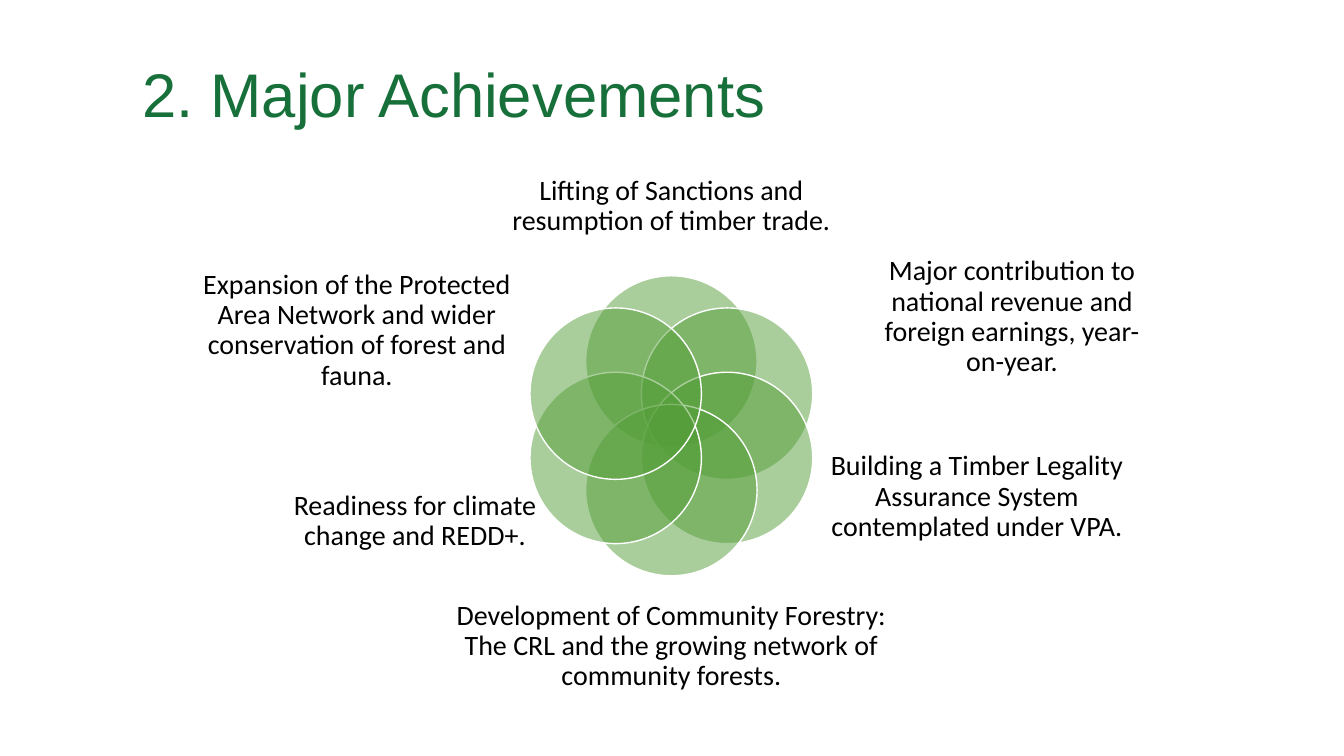
from dataclasses import dataclass
from math import cos, radians, sin

from lxml import etree
from pptx import Presentation
from pptx.dml.color import RGBColor
from pptx.enum.shapes import MSO_SHAPE
from pptx.enum.text import MSO_ANCHOR, MSO_AUTO_SIZE, PP_ALIGN
from pptx.oxml.ns import qn
from pptx.util import Cm, Pt

OVAL = MSO_SHAPE.OVAL
MIDDLE = MSO_ANCHOR.MIDDLE
NO_AUTOFIT = MSO_AUTO_SIZE.NONE
LEFT, CENTER = PP_ALIGN.LEFT, PP_ALIGN.CENTER
TITLE_ONLY = 5


@dataclass(frozen=True)
class Theme:
    title_color: RGBColor = RGBColor(0x17, 0x70, 0x3A)
    text_color: RGBColor = RGBColor(0, 0, 0)
    petal_color: RGBColor = RGBColor(0x54, 0x9E, 0x39)
    outline_color: RGBColor = RGBColor(0xFF, 0xFF, 0xFF)
    petal_opacity: int = 50
    title_font: str = "Arial"
    text_font: str = "Calibri"
    title_size: Pt = Pt(44)
    text_size: Pt = Pt(20)
    outline_width: Pt = Pt(1)
    line_spacing: float = 0.9


THEME = Theme()

# Flower of overlapping circles, in cm
CENTER_X, CENTER_Y = 16.92, 10.73
ORBIT = 1.62
DIAMETER = 4.32

# Clockwise from the top: text and its box (left, top, width, height) in cm
ACHIEVEMENTS = [
    ("Lifting of Sanctions and resumption of timber trade.",
     (11.89, 3.73, 10.06, 2.95)),
    ("Major contribution to national revenue and foreign earnings, year-on-year.",
     (21.95, 6.38, 7.11, 3.23)),
    ("Building a Timber Legality Assurance System contemplated under VPA.",
     (20.52, 10.72, 8.2, 3.61)),
    ("Development of Community Forestry: The CRL and the growing network of "
     "community forests.",
     (10.9, 14.81, 12.04, 2.95)),
    ("Readiness for climate change and REDD+.",
     (6.65, 11.33, 7.62, 3.61)),
    ("Expansion of the Protected Area Network and wider conservation of forest "
     "and fauna.",
     (4.93, 6.53, 8.13, 3.61)),
]


def write(frame, text, font_name, size, color, alignment):
    frame.word_wrap = True
    frame.auto_size = NO_AUTOFIT
    frame.vertical_anchor = MIDDLE
    paragraph = frame.paragraphs[0]
    paragraph.text = text
    paragraph.alignment = alignment
    paragraph.line_spacing = THEME.line_spacing
    paragraph.font.name = font_name
    paragraph.font.size = size
    paragraph.font.color.rgb = color


def place_title(slide, text):
    title = slide.shapes.title
    title.left, title.top = Cm(3.33), Cm(0.61)
    title.width, title.height = Cm(26.62), Cm(3.68)
    write(title.text_frame, text, THEME.title_font, THEME.title_size,
          THEME.title_color, LEFT)


def add_petal(shapes, angle):
    left = CENTER_X + ORBIT * sin(angle) - DIAMETER / 2
    top = CENTER_Y - ORBIT * cos(angle) - DIAMETER / 2
    petal = shapes.add_shape(OVAL, Cm(left), Cm(top), Cm(DIAMETER), Cm(DIAMETER))
    petal.shadow.inherit = False
    petal.fill.solid()
    petal.fill.fore_color.rgb = THEME.petal_color
    fill_color = petal.fill._xPr.find(qn("a:solidFill"))[0]
    etree.SubElement(fill_color, qn("a:alpha"), val=str(THEME.petal_opacity * 1000))
    petal.line.color.rgb = THEME.outline_color
    petal.line.width = THEME.outline_width


def add_label(shapes, text, box):
    frame = shapes.add_textbox(*map(Cm, box)).text_frame
    frame.margin_left = frame.margin_right = 0
    frame.margin_top = frame.margin_bottom = 0
    write(frame, text, THEME.text_font, THEME.text_size, THEME.text_color, CENTER)


def main():
    presentation = Presentation()
    presentation.slide_width, presentation.slide_height = Cm(33.87), Cm(19.05)
    slide = presentation.slides.add_slide(presentation.slide_layouts[TITLE_ONLY])

    place_title(slide, "2. Major Achievements")

    # One petal and one label per achievement, evenly round the centre
    flower = slide.shapes.add_group_shape().shapes
    step = radians(360 / len(ACHIEVEMENTS))
    for position, (text, box) in enumerate(ACHIEVEMENTS):
        add_petal(flower, position * step)
        add_label(flower, text, box)

    presentation.save("out.pptx")


if __name__ == "__main__":
    main()
